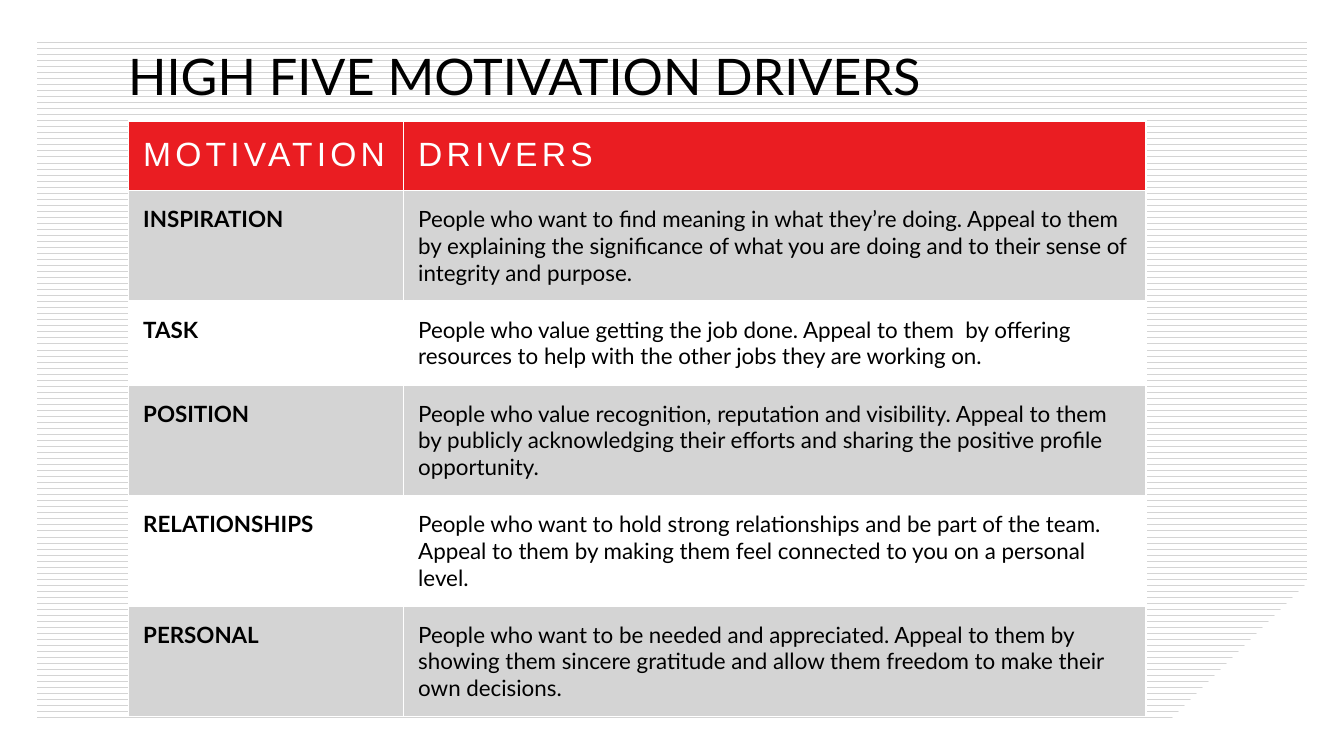
from dataclasses import dataclass

from pptx import Presentation
from pptx import util as u
from pptx.dml.color import RGBColor
from pptx.enum import dml, shapes, text


@dataclass(frozen=True)
class Theme:
    red: RGBColor = RGBColor(0xEA, 0x1D, 0x22)
    grey: RGBColor = RGBColor(0xD4, 0xD4, 0xD4)
    white: RGBColor = RGBColor(0xFF, 0xFF, 0xFF)
    black: RGBColor = RGBColor(0, 0, 0)
    font: str = "Lato"
    head_font: str = "Arial"
    title: int = 36
    head: int = 24
    body: int = 16


THEME = Theme()
HEADS = ("MOTIVATION", "DRIVERS")
TALL, SHORT = 2.78, 2.12  # rows of three and of two lines, in cm
DRIVERS = [
    ("INSPIRATION", "People who want to find meaning in what they’re doing. "
     "Appeal to them by explaining the significance of what you are doing "
     "and to their sense of integrity and purpose.", TALL),
    ("TASK", "People who value getting the job done. Appeal to them  by "
     "offering resources to help with the other jobs they are working on.",
     SHORT),
    ("POSITION", "People who value recognition, reputation and visibility. "
     "Appeal to them by publicly acknowledging their efforts and sharing "
     "the positive profile opportunity.", TALL),
    ("RELATIONSHIPS", "People who want to hold strong relationships and be "
     "part of the team. Appeal to them by making them feel connected to you "
     "on a personal level.", TALL),
    ("PERSONAL", "People who want to be needed and appreciated. Appeal to "
     "them by showing them sincere gratitude and allow them freedom to make "
     "their own decisions.", TALL),
]


def style(para, name, size, color, bold=False):
    font = para.font
    font.name, font.size, font.bold = name, u.Pt(size), bold
    font.color.rgb = color


def add_plain(slide, kind, *box):
    """Add a shape without line or shadow; box is in cm."""
    shape = slide.shapes.add_shape(kind, *map(u.Cm, box))
    shape.shadow.inherit = False
    shape.line.fill.background()
    return shape


def add_backdrop(slide):
    """Lined panel whose lower right corner is cut off."""
    panel = add_plain(slide, shapes.MSO_SHAPE.RECTANGLE, 0.94, 0.91, 32, 17.2)
    fill = panel.fill
    fill.patterned()
    fill.pattern = dml.MSO_PATTERN.DASHED_HORIZONTAL
    fill.fore_color.rgb = THEME.grey
    fill.back_color.rgb = THEME.white

    side = 5.29
    corner = add_plain(slide, shapes.MSO_SHAPE.RIGHT_TRIANGLE,
                       33.87 - side, 19.05 - side, side, side)
    corner.rotation = 270
    corner.fill.solid()
    corner.fill.fore_color.rgb = THEME.white


def set_title(slide, words):
    title = slide.shapes.title
    slide.shapes._spTree.append(title._element)  # bring to front
    title.left, title.top = u.Cm(3.23), u.Cm(0.91)
    title.width, title.height = u.Cm(24.33), u.Cm(1.96)
    frame = title.text_frame
    frame.text = words
    frame.margin_left = frame.margin_right = 0
    frame.margin_top = frame.margin_bottom = 0
    frame.vertical_anchor = text.MSO_ANCHOR.MIDDLE
    para = frame.paragraphs[0]
    para.alignment = text.PP_ALIGN.LEFT
    style(para, THEME.font, THEME.title, THEME.black)


def fill_cell(cell, words, fill):
    """Write and pad a cell, and return its paragraph."""
    cell.text = words
    cell.margin_left = cell.margin_right = u.Cm(0.38)
    cell.margin_top = cell.margin_bottom = u.Cm(0.38)
    cell.fill.solid()
    cell.fill.fore_color.rgb = fill
    return cell.text_frame.paragraphs[0]


def add_drivers(slide):
    widths = (6.93, 18.72)
    heights = [1.75] + [high for *_, high in DRIVERS]
    box = (3.23, 3.05, sum(widths), sum(heights))
    table = slide.shapes.add_table(
        len(heights), len(widths), *map(u.Cm, box)).table
    for col, width in zip(table.columns, widths):
        col.width = u.Cm(width)
    for row, high in zip(table.rows, heights):
        row.height = u.Cm(high)

    for col, head in enumerate(HEADS):
        para = fill_cell(table.cell(0, col), head, THEME.red)
        style(para, THEME.head_font, THEME.head, THEME.white)
        para.runs[0]._r.get_or_add_rPr().set("spc", "300")
    for row, (*words, _) in enumerate(DRIVERS, 1):
        fill = THEME.grey if row % 2 else THEME.white
        for col, word in enumerate(words):
            para = fill_cell(table.cell(row, col), word, fill)
            style(para, THEME.font, THEME.body, THEME.black, bold=col == 0)


def main():
    deck = Presentation()
    deck.slide_width, deck.slide_height = u.Cm(33.87), u.Cm(19.05)
    slide = deck.slides.add_slide(deck.slide_layouts.get_by_name("Title Only"))
    add_backdrop(slide)
    set_title(slide, "HIGH FIVE MOTIVATION DRIVERS")
    add_drivers(slide)
    deck.save("out.pptx")


if __name__ == "__main__":
    main()
